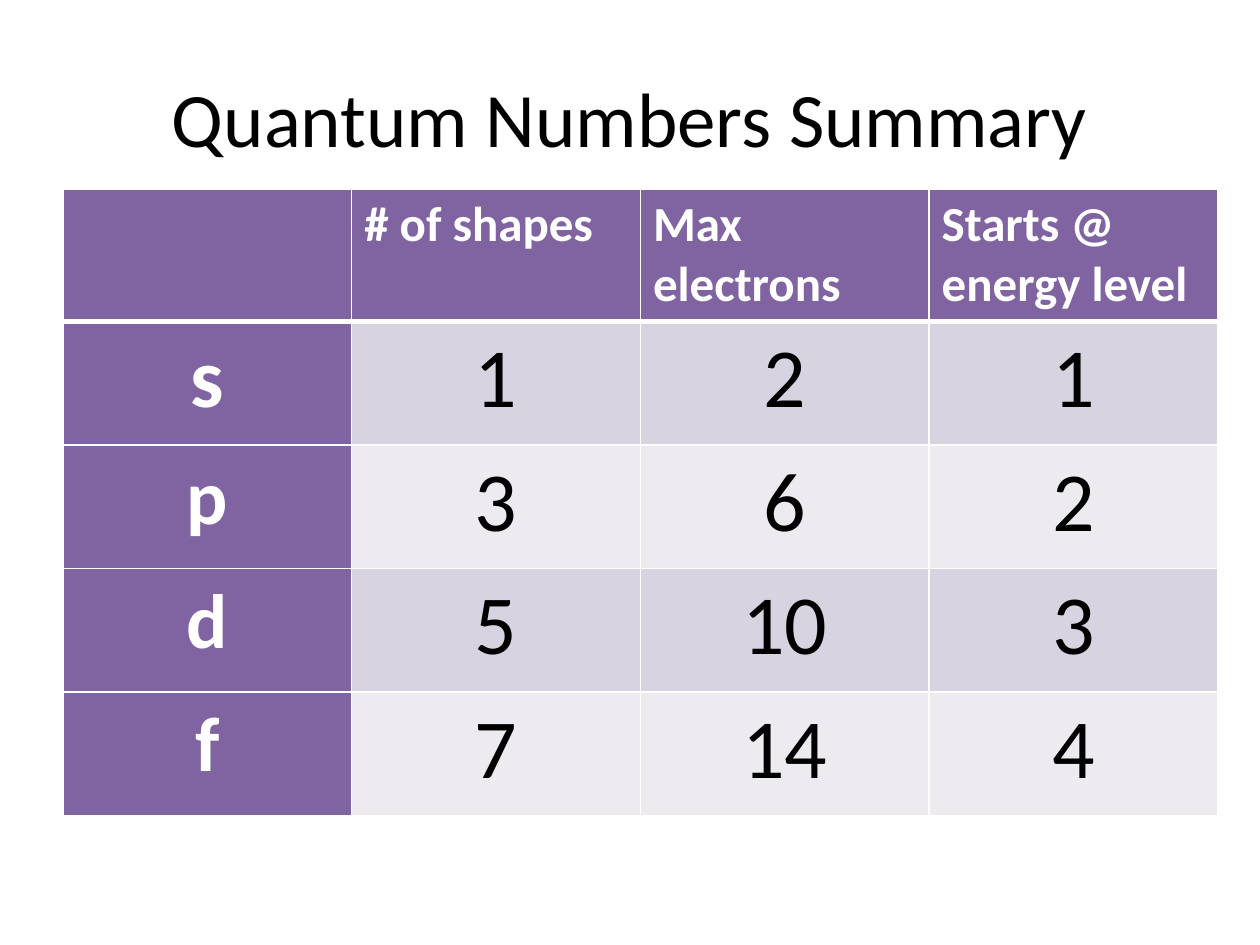
from lxml import etree
from pptx import Presentation
from pptx.dml.color import RGBColor
from pptx.enum.text import MSO_ANCHOR, PP_ALIGN
from pptx.oxml.ns import qn
from pptx.util import Cm, Pt

LEFT, MID = PP_ALIGN.LEFT, PP_ALIGN.CENTER
HUES = {"head": "8064A2", "odd": "D8D3E0", "even": "EDEAF0",
        "white": "FFFFFF", "black": "000000"}


def write(frame, text, size=48, hue="black", bold=False, align=MID):
    para = frame.paragraphs[0]
    para.alignment = align
    run = para.add_run()
    run.text = text
    run.font.name = "Calibri"
    run.font.size = Pt(size)
    run.font.bold = bold
    run.font.color.rgb = RGBColor.from_string(HUES[hue])


def edge(cell, side, width):
    line = etree.SubElement(cell._tc.get_or_add_tcPr(), qn("a:ln" + side),
                            w=str(Pt(width)))
    fill = etree.SubElement(line, qn("a:solidFill"))
    etree.SubElement(fill, qn("a:srgbClr"), val=HUES["white"])


deck = Presentation()
deck.slide_width, deck.slide_height = Cm(25.4), Cm(19.05)
slide = deck.slides.add_slide(deck.slide_layouts[5])

title = slide.shapes.title
title.left, title.top = Cm(1.27), Cm(0.76)
title.width, title.height = Cm(22.86), Cm(3.18)
title.text_frame.vertical_anchor = MSO_ANCHOR.MIDDLE
write(title.text_frame, "Quantum Numbers Summary", size=44)

rows = [
    ["", "# of shapes", "Max electrons", "Starts @ energy level"],
    ["s", "1", "2", "1"],
    ["p", "3", "6", "2"],
    ["d", "5", "10", "3"],
    ["f", "7", "14", "4"],
]
table = slide.shapes.add_table(len(rows), len(rows[0]), Cm(1.27), Cm(3.81),
                               Cm(23.28), Cm(12.63)).table
table.first_col = True
for col in table.columns:
    col.width = Cm(5.82)

for r, row in enumerate(rows):
    table.rows[r].height = Cm(2.49 if r else 2.67)
    for c, text in enumerate(row):
        cell = table.cell(r, c)
        edge(cell, "L", 1)
        edge(cell, "R", 1)
        edge(cell, "T", 3 if r == 1 else 1)
        edge(cell, "B", 3 if r == 0 else 1)
        band = "head" if r == 0 or c == 0 else "odd" if r % 2 else "even"
        cell.fill.solid()
        cell.fill.fore_color.rgb = RGBColor.from_string(HUES[band])
        if r == 0 and text:
            write(cell.text_frame, text, size=28, hue="white", bold=True,
                  align=LEFT)
        elif r and c == 0:
            write(cell.text_frame, text, size=48 if r == 1 else 44,
                  hue="white", bold=True)
        elif r:
            write(cell.text_frame, text)

deck.save("out.pptx")
